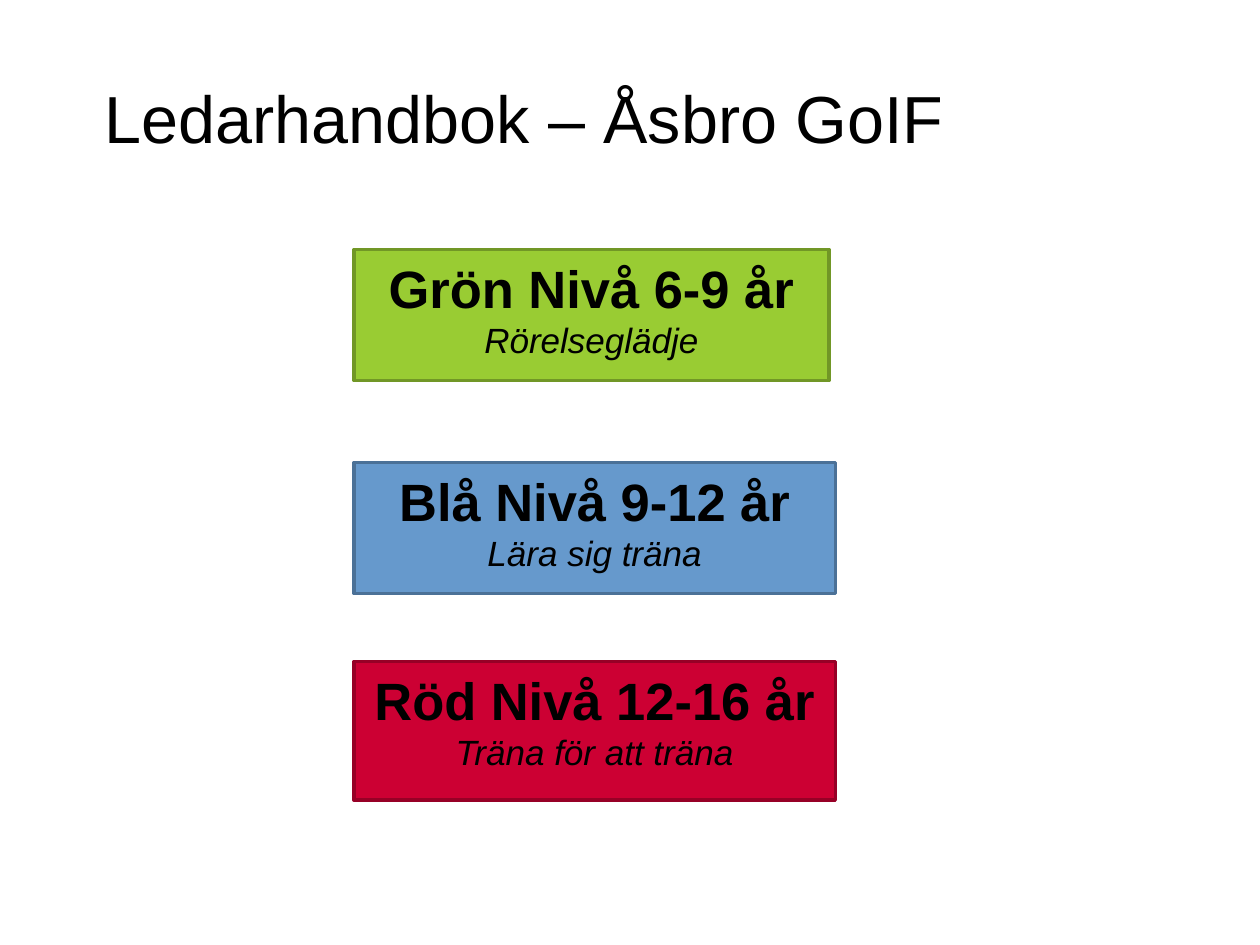
from pptx import Presentation
from pptx.dml.color import RGBColor as RGB
from pptx.enum.shapes import MSO_SHAPE as Shape
from pptx.enum.text import MSO_ANCHOR as Anchor, PP_ALIGN as Align
from pptx.util import Inches, Pt

BLACK = RGB(0x00, 0x00, 0x00)
GREEN = RGB(0x99, 0xCC, 0x33)
MOSS = RGB(0x71, 0x97, 0x26)
BLUE = RGB(0x66, 0x99, 0xCC)
NAVY = RGB(0x4B, 0x71, 0x97)
RED = RGB(0xCC, 0x00, 0x33)
WINE = RGB(0x97, 0x00, 0x26)

COLS, ROWS = 100, 75
CELL = Inches(0.1)
LEFT = 28.1
TEXT_W, TEXT_H = 38.6, 9.4

LEVELS = [
    ("Grön Nivå 6-9 år", "Rörelseglädje", 19.8, 37.7, 10.4, GREEN, MOSS),
    ("Blå Nivå 9-12 år", "Lära sig träna", 36.7, 38.2, 10.4, BLUE, NAVY),
    ("Röd Nivå 12-16 år", "Träna för att träna", 52.5, 38.2, 11, RED, WINE),
]


def grid(box):
    return [round(part * CELL) for part in box]


def style(para, size, bold=False, italic=False):
    for run in para.runs:
        font = run.font
        font.name = "Arial"
        font.size = Pt(size)
        font.bold = bold
        font.italic = italic
        font.color.rgb = BLACK


def add_text(slide, box):
    frame = slide.shapes.add_textbox(*grid(box)).text_frame
    frame.word_wrap = True
    return frame


def add_title(slide, box, text):
    frame = add_text(slide, box)
    frame.vertical_anchor = Anchor.MIDDLE
    frame.text = text
    style(frame.paragraphs[0], 38)


def add_level(slide, box, name, motto, fill, edge):
    panel = slide.shapes.add_shape(Shape.RECTANGLE, *grid(box))
    panel.shadow.inherit = False
    panel.fill.solid()
    panel.fill.fore_color.rgb = fill
    panel.line.color.rgb = edge
    panel.line.width = Pt(2)

    left, top, width, _ = box
    frame = add_text(slide, (left + (width - TEXT_W) / 2, top, TEXT_W, TEXT_H))
    head = frame.paragraphs[0]
    head.text = name
    style(head, 30, bold=True)
    note = frame.add_paragraph()
    note.text = motto
    style(note, 20, italic=True)
    for para in frame.paragraphs:
        para.alignment = Align.CENTER


def main():
    deck = Presentation()
    deck.slide_width = COLS * CELL
    deck.slide_height = ROWS * CELL
    slide = deck.slides.add_slide(deck.slide_layouts[6])
    add_title(slide, (7.3, 3, 85.5, 12.5), "Ledarhandbok – Åsbro GoIF")
    for name, motto, top, width, height, fill, edge in LEVELS:
        add_level(slide, (LEFT, top, width, height), name, motto, fill, edge)
    deck.save("out.pptx")


if __name__ == "__main__":
    main()
